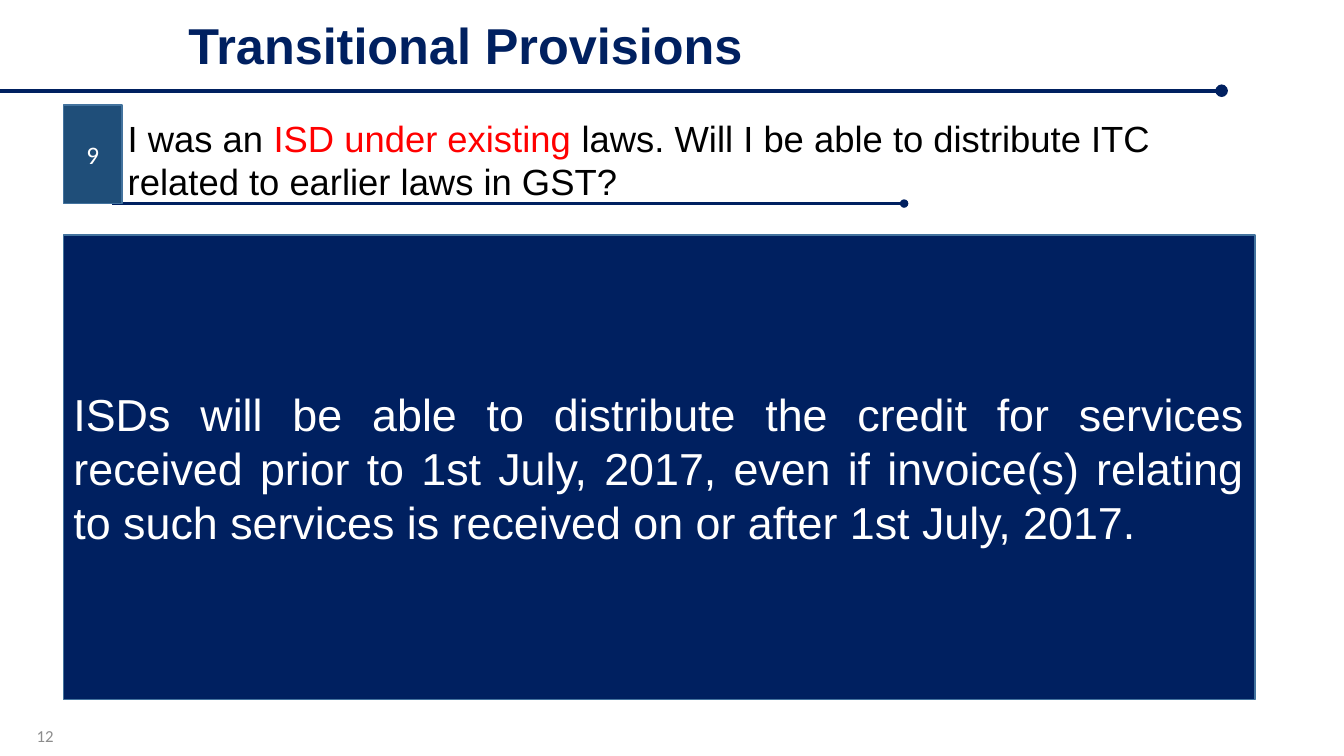
from lxml.etree import SubElement
from pptx import Presentation
from pptx.dml.color import RGBColor
from pptx.enum.shapes import MSO_CONNECTOR as Connector, MSO_SHAPE as Shape
from pptx.enum.text import MSO_ANCHOR as Anchor, MSO_AUTO_SIZE as AutoSize, PP_ALIGN as Align
from pptx.oxml.ns import qn
from pptx.util import Pt

COLOURS = {
    "navy": "002060",
    "badge": "1F4E79",
    "outline": "43739E",
    "red": "FF0000",
    "black": "000000",
    "white": "FFFFFF",
    "grey": "8C8C8C",
}
TITLE_ONLY = 5
LEFT = 45.4  # shared left edge of the badge and the answer panel


def colour(name):
    return RGBColor.from_string(COLOURS[name])


def write(shape, spans, size, font="Arial", bold=False, align=Align.LEFT, anchor=Anchor.TOP):
    """Fill a shape with one paragraph of (text, colour name) spans."""
    frame = shape.text_frame
    frame_format = {"word_wrap": True, "auto_size": AutoSize.NONE, "vertical_anchor": anchor}
    for name, value in frame_format.items():
        setattr(frame, name, value)
    para = frame.paragraphs[0]
    para.alignment = align
    for text, ink in spans:
        span = para.add_run()
        span.text = text
        font_format = {"name": font, "size": Pt(size), "bold": bold}
        for name, value in font_format.items():
            setattr(span.font, name, value)
        span.font.color.rgb = colour(ink)


def add_title(page, box, text):
    title = page.shapes.title
    for name, value in zip(("left", "top", "width", "height"), box):
        setattr(title, name, Pt(value))
    write(title, [(text, "navy")], 36, bold=True)


def add_text(page, box, spans, size, **style):
    write(page.shapes.add_textbox(*map(Pt, box)), spans, size, **style)


def add_panel(page, box, fill, text, size, **style):
    panel = page.shapes.add_shape(Shape.RECTANGLE, *map(Pt, box))
    panel.shadow.inherit = False
    panel.fill.solid()
    panel.fill.fore_color.rgb = colour(fill)
    panel.line.color.rgb = colour("outline")
    panel.line.width = Pt(1)
    write(panel, [(text, "white")], size, anchor=Anchor.MIDDLE, **style)


def add_rule(page, start, end, top, width):
    """Draw a horizontal line that ends in a dot."""
    rule = page.shapes.add_connector(Connector.STRAIGHT, Pt(start), Pt(top), Pt(end), Pt(top))
    rule.line.color.rgb = colour("navy")
    rule.line.width = Pt(width)
    properties = rule.line._get_or_add_ln()
    SubElement(properties, qn("a:tailEnd"), type="oval")
    SubElement(rule._element.spPr, qn("a:effectLst"))


def main():
    deck = Presentation()
    deck.slide_width, deck.slide_height = Pt(960), Pt(540)
    page = deck.slides.add_slide(deck.slide_layouts[TITLE_ONLY])

    # Heading
    add_rule(page, 0, 872.6, 64.8, 3)
    add_title(page, (127.4, 6.5, 598.3, 51.1), "Transitional Provisions")

    # Numbered question
    add_rule(page, 80, 645.8, 145.4, 2)
    add_panel(page, (LEFT, 74.9, 41.8, 70.5), "badge", "9", 18,
              font="Calibri", align=Align.CENTER)
    question = [
        ("I was an ", "black"),
        ("ISD under existing ", "red"),
        ("laws. Will I be able to distribute ITC related to earlier laws in GST?", "black"),
    ]
    add_text(page, (84.2, 79.2, 804.2, 70.5), question, 26)

    # Answer
    answer = ("ISDs will be able to distribute the credit for services received prior to "
              "1st July, 2017, even if invoice(s) relating to such services is received "
              "on or after 1st July, 2017.")
    add_panel(page, (LEFT, 167.8, 851, 332), "navy", answer, 32, align=Align.JUSTIFY)

    # Page number
    add_text(page, (0, 511.2, LEFT, 28.8), [("12", "grey")], 12,
             font="Calibri", align=Align.RIGHT, anchor=Anchor.MIDDLE)

    deck.save("out.pptx")


if __name__ == "__main__":
    main()
